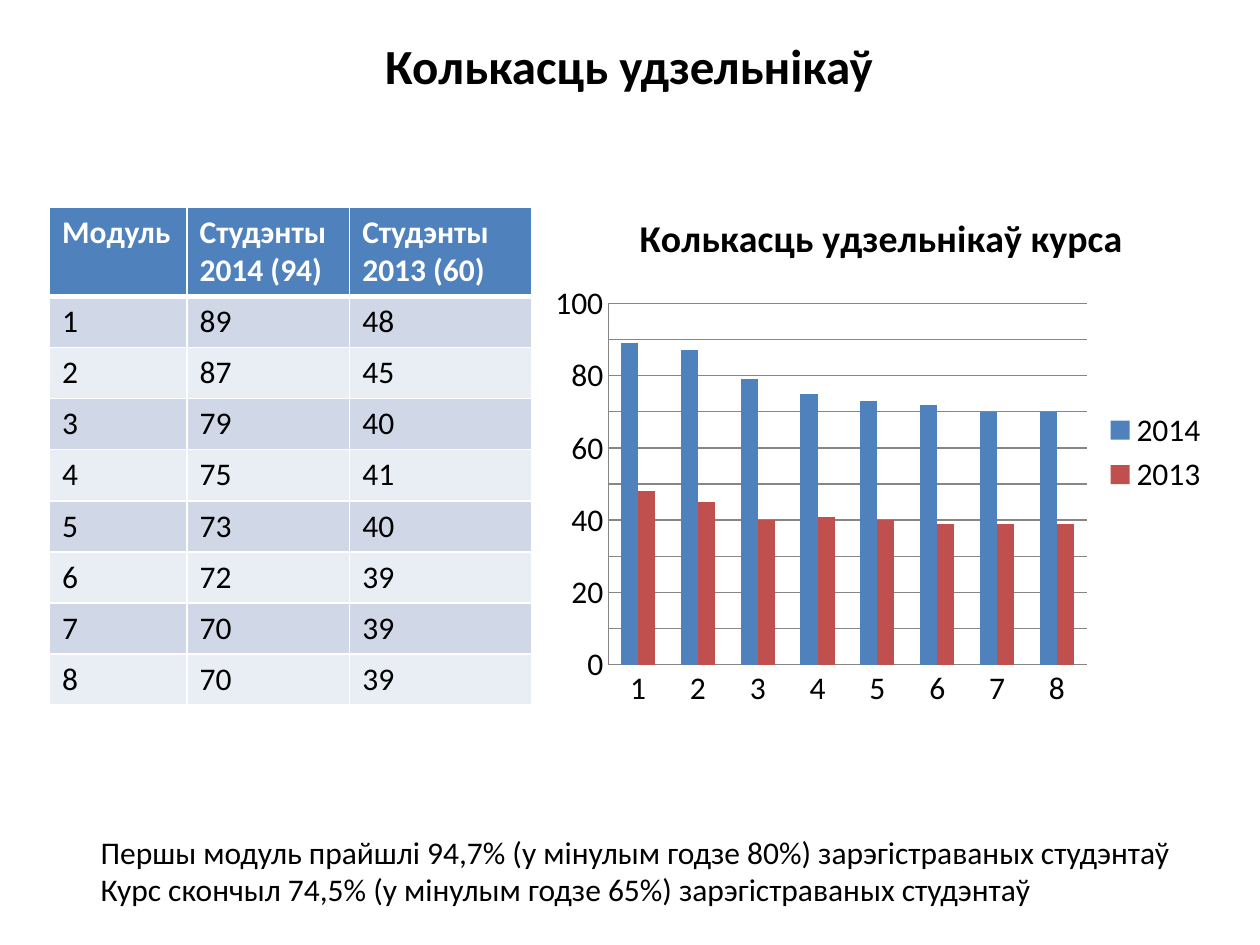
from lxml import etree
from pptx import Presentation
from pptx.chart.data import CategoryChartData
from pptx.dml.color import RGBColor
from pptx.enum.chart import XL_CHART_TYPE, XL_LEGEND_POSITION, XL_TICK_MARK
from pptx.enum.text import MSO_ANCHOR, MSO_AUTO_SIZE, PP_ALIGN
from pptx.oxml.ns import qn
from pptx.util import Cm, Pt

COLUMNS = XL_CHART_TYPE.COLUMN_CLUSTERED
RIGHT = XL_LEGEND_POSITION.RIGHT
NO_TICK = XL_TICK_MARK.NONE
MIDDLE = MSO_ANCHOR.MIDDLE
CENTER = PP_ALIGN.CENTER
GROW = MSO_AUTO_SIZE.SHAPE_TO_FIT_TEXT

COLORS = {
    "black": "000000", "white": "FFFFFF", "blue": "4F81BD", "red": "C0504D",
    "dark band": "D0D8E8", "light band": "E9EDF4", "grid": "868686",
}
BODY = {"name": "Calibri", "size": Pt(18), "bold": False}
HEAD = {**BODY, "bold": True}
TITLE = {**HEAD, "size": Pt(28)}
CAPTION = {**HEAD, "size": Pt(21.6)}

MODULES = [str(n) for n in range(1, 9)]
COUNTS = {
    "2014": [89, 87, 79, 75, 73, 72, 70, 70],
    "2013": [48, 45, 40, 41, 40, 39, 39, 39],
}
TOTALS = {"2014": 94, "2013": 60}
NOTES = [
    "Першы модуль прайшлі 94,7% (у мінулым годзе 80%) зарэгістраваных студэнтаў",
    "Курс скончыл 74,5% (у мінулым годзе 65%) зарэгістраваных студэнтаў",
]


def color(name):
    return RGBColor.from_string(COLORS[name])


def assign(target, values):
    for key, value in values.items():
        setattr(target, key, value)


def style(font, values, tint="black"):
    assign(font, values)
    font.color.rgb = color(tint)


def paint(fill, tint):
    fill.solid()
    fill.fore_color.rgb = color(tint)


def rule(line, tint="grid"):
    line.color.rgb = color(tint)
    line.width = Pt(0.75)


def border(cell, widths):
    """Draw white cell edges; widths maps L, R, T, B to points."""
    props = cell._tc.get_or_add_tcPr()
    for side, width in widths.items():
        line = etree.SubElement(props, qn(f"a:ln{side}"), w=str(Pt(width)))
        fill = etree.SubElement(line, qn("a:solidFill"))
        etree.SubElement(fill, qn("a:srgbClr"), val=COLORS["white"])


class Sheet:
    def __init__(self, slide, font):
        self.slide = slide
        self.font = font

    def title(self, text, box):
        shape = self.slide.shapes.title
        assign(shape, dict(zip(("left", "top", "width", "height"), box)))
        frame = shape.text_frame
        frame.text = text
        frame.vertical_anchor = MIDDLE
        frame.paragraphs[0].alignment = CENTER
        style(frame.paragraphs[0].runs[0].font, TITLE)

    def text(self, lines, box):
        frame = self.slide.shapes.add_textbox(*box).text_frame
        assign(frame, {"word_wrap": False, "auto_size": GROW})
        frame.text = "\n".join(lines)
        for para in frame.paragraphs:
            style(para.runs[0].font, self.font)

    def cell(self, cell, text, head, band):
        cell.text = text
        font = cell.text_frame.paragraphs[0].runs[0].font
        style(font, HEAD if head else self.font, "white" if head else "black")
        border(cell, {"L": 1, "R": 1, "T": 1, "B": 3 if head else 1})
        paint(cell.fill, band)

    def table(self, rows, box, widths, heights):
        shape = self.slide.shapes.add_table(len(rows), len(widths), *box)
        table = shape.table
        for col, width in zip(table.columns, widths):
            col.width = width
        for row, height in zip(table.rows, heights):
            row.height = height
        for r, row in enumerate(rows):
            band = "blue" if r == 0 else "dark band" if r % 2 else "light band"
            for c, text in enumerate(row):
                self.cell(table.cell(r, c), text, r == 0, band)

    def chart(self, title, cats, series, tints, box):
        data = CategoryChartData()
        data.categories = cats
        for name, values in series.items():
            data.add_series(name, values)
        chart = self.slide.shapes.add_chart(COLUMNS, *box, data).chart
        style(chart.font, self.font)
        chart.has_title = True
        frame = chart.chart_title.text_frame
        frame.text = title
        style(frame.paragraphs[0].runs[0].font, CAPTION)
        chart.has_legend = True
        assign(chart.legend, {"position": RIGHT, "include_in_layout": False})
        plot = chart.plots[0]
        assign(plot, {"gap_width": 150, "overlap": 0, "vary_by_categories": False})
        for item, tint in zip(plot.series, tints):
            paint(item.format.fill, tint)
        for axis in (chart.category_axis, chart.value_axis):
            assign(axis, {"major_tick_mark": NO_TICK, "minor_tick_mark": NO_TICK})
            rule(axis.format.line)
        assign(chart.value_axis, {
            "minimum_scale": 0, "maximum_scale": 100, "major_unit": 10,
            "has_major_gridlines": True,
        })
        rule(chart.value_axis.major_gridlines.format.line)


def main():
    deck = Presentation()
    assign(deck, {"slide_width": Cm(25.4), "slide_height": Cm(19.05)})
    sheet = Sheet(deck.slides.add_slide(deck.slide_layouts[5]), BODY)

    sheet.title("Колькасць удзельнікаў", (Cm(0.58), Cm(0), Cm(24.2), Cm(2.6)))

    heads = ["Модуль"] + [f"Студэнты {year} ({n})" for year, n in TOTALS.items()]
    body = [[str(v) for v in row] for row in zip(MODULES, *COUNTS.values())]
    sheet.table(
        [heads] + body,
        (Cm(1), Cm(4.17), Cm(9.71), Cm(9.9)),
        [Cm(2.77), Cm(3.28), Cm(3.66)],
        [Cm(1.78)] + [Cm(1.03)] * len(body),
    )
    sheet.chart(
        "Колькасць удзельнікаў курса", MODULES, COUNTS, ["blue", "red"],
        (Cm(10.92), Cm(3.76), Cm(13.7), Cm(10.72)),
    )
    sheet.text(NOTES, (Cm(1.78), Cm(16.66), Cm(22.3), Cm(1.8)))
    deck.save("out.pptx")


if __name__ == "__main__":
    main()
